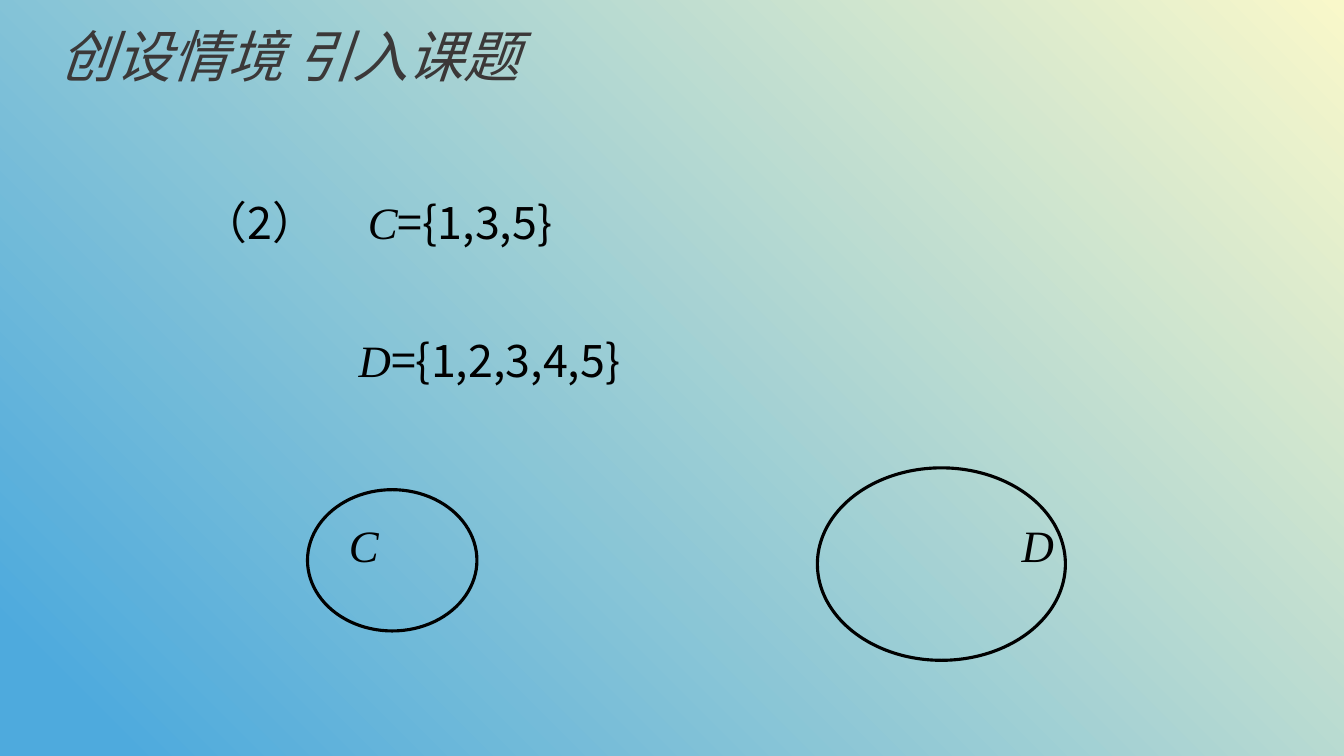
from lxml.etree import SubElement
from pptx import Presentation
from pptx.dml.color import RGBColor
from pptx.enum.shapes import MSO_SHAPE
from pptx.enum.text import MSO_ANCHOR, MSO_AUTO_SIZE, PP_ALIGN
from pptx.oxml.ns import qn
from pptx.util import Cm, Pt

COLORS = {"blue": "4EAADD", "cream": "F9F8CA", "title": "3B3838", "ink": "000000"}
SANS, SERIF = "Noto Sans CJK SC", "Times New Roman"


def rgb(name):
    """Return a palette colour."""
    return RGBColor.from_string(COLORS[name])


def set_face(font, face, italic):
    """Set one typeface for Latin and East Asian text."""
    font.name = face
    font.italic = italic
    SubElement(font._element, qn("a:ea"), typeface=face)


def style(p, size, color):
    """Set the size and colour of a paragraph."""
    p.font.size = Pt(size)
    p.font.color.rgb = rgb(color)


def paint_background(s):
    """Fill the slide from blue at bottom left to cream at top right."""
    fill = s.background.fill
    fill.gradient()
    fill.gradient_angle = 45
    for stop, color, position in zip(fill.gradient_stops, ("blue", "cream"), (0.06, 1)):
        stop.color.rgb = rgb(color)
        stop.position = position


def add_title(s, text, x, y, w, h):
    """Add the slanted title in an unfilled parallelogram."""
    sp = s.shapes.add_shape(MSO_SHAPE.PARALLELOGRAM, Cm(x), Cm(y), Cm(w), Cm(h))
    sp.shadow.inherit = False
    sp.fill.background()
    sp.line.fill.background()
    tf = sp.text_frame
    tf.word_wrap = False
    tf.vertical_anchor = MSO_ANCHOR.MIDDLE
    p = tf.paragraphs[0]
    p.alignment = PP_ALIGN.CENTER
    p.add_run().text = text
    style(p, 40, "title")
    set_face(p.font, SANS, True)


def add_formula(shapes, name, value, x, y, w, h=1.63, number="", tab=0):
    """Add a set name with an optional value and tabbed number."""
    tf = shapes.add_textbox(Cm(x), Cm(y), Cm(w), Cm(h)).text_frame
    tf.word_wrap = bool(value)
    tf.auto_size = MSO_AUTO_SIZE.SHAPE_TO_FIT_TEXT
    p = tf.paragraphs[0]
    if number:
        tabs = SubElement(p._p.get_or_add_pPr(), qn("a:tabLst"))
        SubElement(tabs, qn("a:tab"), pos=str(Cm(tab)), algn="l")
        number += "\t"
    style(p, 32, "ink")
    for text, face, italic in ((number, SANS, False), (name, SERIF, True), (value, SANS, False)):
        if text:
            r = p.add_run()
            r.text = text
            set_face(r.font, face, italic)


def add_set(s, name, x, y, w, h, label_dx, label_dy):
    """Group an ellipse with its label placed from the ellipse corner."""
    group = s.shapes.add_group_shape()
    sp = group.shapes.add_shape(MSO_SHAPE.OVAL, Cm(x), Cm(y), Cm(w), Cm(h))
    sp.shadow.inherit = False
    sp.fill.background()
    sp.line.color.rgb = rgb("ink")
    sp.line.width = Pt(2.25)
    add_formula(group.shapes, name, "", x + label_dx, y + label_dy, 1.3)


def main():
    """Build and save the slide."""
    prs = Presentation()
    prs.slide_width, prs.slide_height = Cm(33.87), Cm(19.05)
    s = prs.slides.add_slide(prs.slide_layouts[6])
    paint_background(s)
    add_title(s, "创设情境 引入课题", -0.33, 0.1, 15.27, 2.57)
    add_set(s, "C", 7.75, 12.34, 4.27, 3.56, 0.79, 0.59)
    add_set(s, "D", 20.6, 11.79, 6.25, 4.85, 4.9, 1.14)
    add_formula(s.shapes, "C", "={1,3,5}", 4.85, 4.78, 22.23, number="（2）", tab=4.17)
    add_formula(s.shapes, "D", "={1,2,3,4,5}", 8.79, 8.26, 22.23)
    prs.save("out.pptx")


if __name__ == "__main__":
    main()
